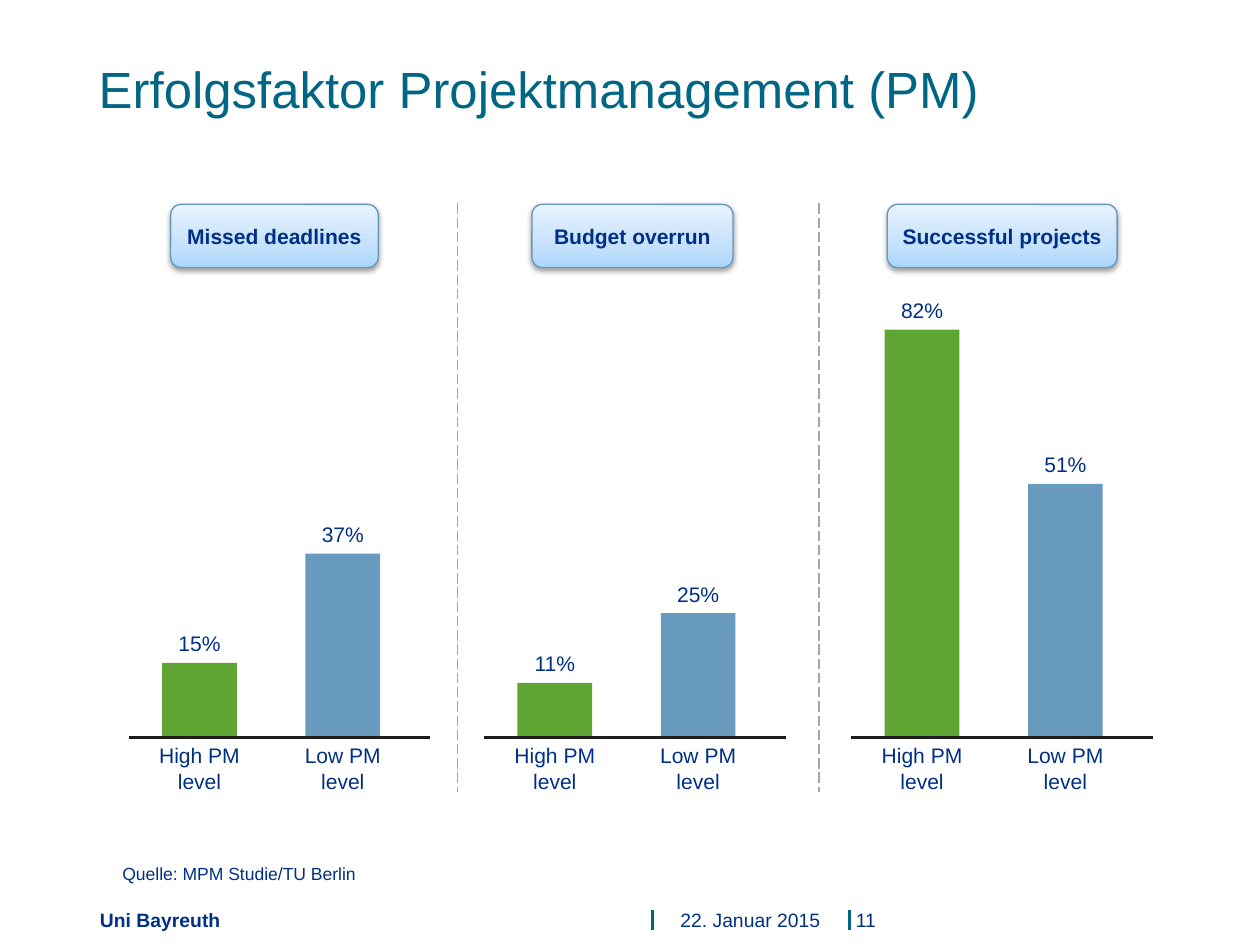
import copy
import pptx
import pptx.util
import pptx.dml.color
import pptx.enum.dml
import pptx.enum.shapes
import pptx.enum.text
import pptx.oxml
import pptx.oxml.ns

Cm, Pt = pptx.util.Cm, pptx.util.Pt
RGBColor = pptx.dml.color.RGBColor
SHAPE = pptx.enum.shapes.MSO_SHAPE
ALIGN = pptx.enum.text.PP_ALIGN
ANCHOR = pptx.enum.text.MSO_ANCHOR
DASH = pptx.enum.dml.MSO_LINE

# Content
TITLE = "Erfolgsfaktor Projektmanagement (PM)"
LEVELS = ["High PM\nlevel", "Low PM\nlevel"]
PANELS = [  # heading, heading left and width, axis left, percent per level
    ("Missed deadlines", 3.43, 4.17, 2.59, (15, 37)),
    ("Budget overrun", 10.69, 4.04, 9.73, (11, 25)),
    ("Successful projects", 17.83, 4.62, 17.11, (82, 51)),
]
SOURCE = "Quelle: MPM Studie/TU Berlin"
FOOTER = [  # text, left, width, left inset, alignment, bold
    ("Uni Bayreuth", 1.73, 11.05, 0.28, ALIGN.LEFT, True),
    ("22. Januar 2015", 13.28, 3.6, 0, ALIGN.CENTER, False),
    ("11", 17.2, 1.3, 0, ALIGN.LEFT, False),
]

# Colours
TEAL = RGBColor(0x00, 0x66, 0x83)
NAVY = RGBColor(0x00, 0x30, 0x85)
GREEN = RGBColor(0x5F, 0xA5, 0x34)
BLUE = RGBColor(0x68, 0x9B, 0xBE)
EDGE = RGBColor(0x64, 0x98, 0xBC)
BLACK = RGBColor(0x1C, 0x1C, 0x1C)
GREY = RGBColor(0xA6, 0xA6, 0xA6)
STOPS = [
    (0, RGBColor(0xAC, 0xD6, 0xFC)),
    (0.35, RGBColor(0xC5, 0xE1, 0xFC)),
    (1, RGBColor(0xE8, 0xF3, 0xFF)),
]
SHADOW = (
    '<a:outerShdw xmlns:a="http://schemas.openxmlformats.org/drawingml/2006/main" '
    'blurRad="40000" dist="20000" dir="5400000" rotWithShape="0">'
    '<a:srgbClr val="000000"><a:alpha val="38000"/></a:srgbClr></a:outerShdw>'
)

# Measures in cm; one percent is one millimetre of bar height
BASE, AXIS = 14.83, 6.06
BAR, FIRST, STEP, SCALE = 1.5, 0.67, 2.88, 0.1

deck = pptx.Presentation()
deck.slide_width, deck.slide_height = Cm(25.32), Cm(19)
slide = deck.slides.add_slide(deck.slide_layouts[5])
shapes = slide.shapes


def write(text, shape=None, box=None, size=12, color=NAVY, bold=False,
          align=ALIGN.CENTER, anchor=ANCHOR.TOP, wrap=True, inset=None):
    if shape is None:
        shape = shapes.add_textbox(*map(Cm, box))
    frame = shape.text_frame
    frame.text = text
    frame.word_wrap = wrap
    frame.vertical_anchor = anchor
    if inset is not None:
        frame.margin_left = Cm(inset)
        frame.margin_right = frame.margin_top = frame.margin_bottom = 0
    for par in frame.paragraphs:
        par.alignment = align
        par.font.name, par.font.size = "Arial", Pt(size)
        par.font.bold, par.font.color.rgb = bold, color


def rule(x1, y1, x2, y2, color, width, dash=None):
    line = shapes.add_connector(
        pptx.enum.shapes.MSO_CONNECTOR.STRAIGHT, Cm(x1), Cm(y1), Cm(x2), Cm(y2))
    line.line.color.rgb, line.line.width = color, Pt(width)
    if dash:
        line.line.dash_style = dash
    props = line._element.spPr
    props.append(props.makeelement(pptx.oxml.ns.qn("a:effectLst")))


def badge(text, left, width):
    shape = shapes.add_shape(
        SHAPE.ROUNDED_RECTANGLE, Cm(left), Cm(4.11), Cm(width), Cm(1.27))
    shape.fill.gradient()
    shape.fill.gradient_angle = 90
    props = shape._element.spPr
    ramp = props.find(".//" + pptx.oxml.ns.qn("a:gsLst"))
    ramp.append(copy.deepcopy(ramp[0]))
    for stop, (place, color) in zip(shape.fill.gradient_stops, STOPS):
        stop.position, stop.color.rgb = place, color
    shape.line.color.rgb, shape.line.width = EDGE, Pt(0.75)
    shape.shadow.inherit = False
    glow = props.find(pptx.oxml.ns.qn("a:effectLst"))
    glow.append(pptx.oxml.parse_xml(SHADOW))
    write(text, shape, bold=True, anchor=ANCHOR.MIDDLE, wrap=False)


# Title
title = shapes.title
title.left, title.top, title.width, title.height = map(Cm, (1.73, 1.04, 23.59, 2.49))
write(TITLE, title, size=29, color=TEAL, align=ALIGN.LEFT)

# Panels: bars with value and level, axis, heading
for head, left, width, start, values in PANELS:
    for i, (value, level, color) in enumerate(zip(values, LEVELS, (GREEN, BLUE))):
        x, high = start + FIRST + i * STEP, value * SCALE
        mid, top = x + BAR / 2, BASE - high
        bar = shapes.add_shape(SHAPE.RECTANGLE, Cm(x), Cm(top), Cm(BAR), Cm(high))
        bar.shadow.inherit = False
        bar.fill.solid()
        bar.fill.fore_color.rgb = color
        bar.line.fill.background()
        write(f"{value}%", box=(mid - 0.69, top - 0.77, 1.38, 0.77), wrap=False)
        write(level, box=(mid - 1.08, BASE - 0.02, 2.16, 1.28), wrap=False)
    rule(start, BASE, start + AXIS, BASE, BLACK, 1.5)
    badge(head, left, width)

# Dividers
for x in (9.19, 16.46):
    rule(x, 4.09, x, 15.93, GREY, 0.75, DASH.LONG_DASH)

# Source and footer
write(SOURCE, box=(2.21, 17.22, 5.44, 0.68), size=10, align=ALIGN.LEFT, wrap=False)
for x in (13.11, 17.07):
    rule(x, 18.29, x, 18.69, TEAL, 1.5)
for text, left, width, inset, align, bold in FOOTER:
    write(text, box=(left, 17.7, width, 1.02), size=11, bold=bold,
          align=align, anchor=ANCHOR.BOTTOM, inset=inset)

deck.save("out.pptx")
